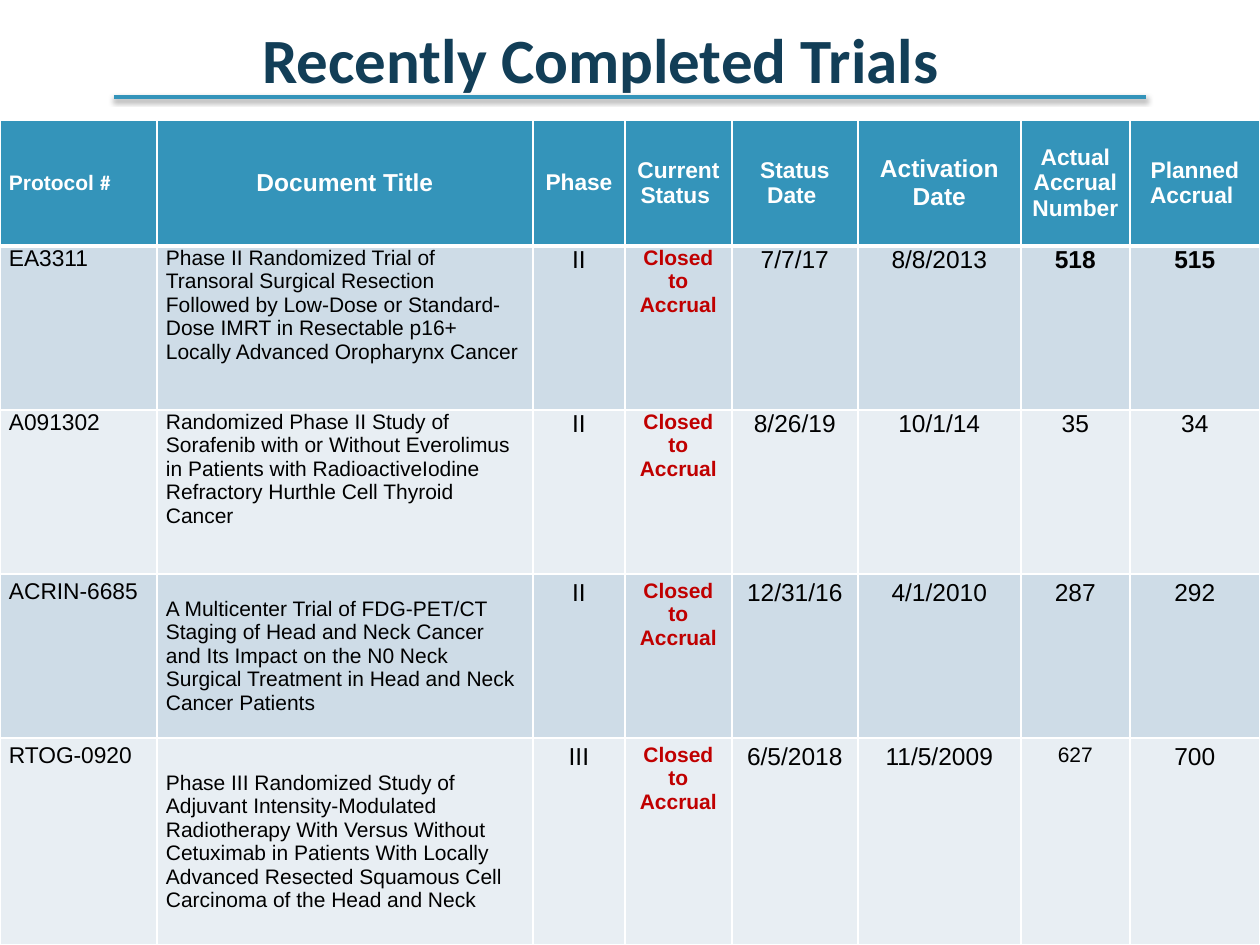
from lxml import etree
from pptx import Presentation
from pptx.dml.color import RGBColor
from pptx.enum.shapes import MSO_CONNECTOR
from pptx.enum.text import MSO_ANCHOR, PP_ALIGN
from pptx.oxml import parse_xml
from pptx.oxml.ns import qn
from pptx.util import Emu, Pt

LEFT, CENTER = PP_ALIGN.LEFT, PP_ALIGN.CENTER
TOP, MIDDLE = MSO_ANCHOR.TOP, MSO_ANCHOR.MIDDLE
STRAIGHT = MSO_CONNECTOR.STRAIGHT

NAVY = RGBColor(0x12, 0x3E, 0x57)
TEAL = RGBColor(0x34, 0x94, 0xBA)
BAND_DARK = RGBColor(0xCE, 0xDC, 0xE7)
BAND_LIGHT = RGBColor(0xE8, 0xEE, 0xF3)
RED = RGBColor(0xC0, 0x00, 0x00)
BLACK = RGBColor(0x00, 0x00, 0x00)
WHITE = RGBColor(0xFF, 0xFF, 0xFF)

HEADING = "Recently Completed Trials"
HEADERS = [
    ("Protocol ", 12), ("Document Title", 14), ("Phase", 13), ("Current Status ", 13),
    ("Status Date ", 13), ("Activation Date", 14), ("Actual Accrual Number ", 13),
    ("Planned Accrual ", 13),
]
STATUS = "Closed to Accrual"
TRIALS = [
    ("EA3311",
     "Phase II Randomized Trial of Transoral Surgical Resection Followed by Low-Dose or "
     "Standard-Dose IMRT in Resectable p16+ Locally Advanced Oropharynx Cancer",
     "II", STATUS, "7/7/17", "8/8/2013", "518", "515"),
    ("A091302",
     "Randomized Phase II Study of Sorafenib with or Without Everolimus in Patients with "
     "RadioactiveIodine Refractory Hurthle Cell Thyroid Cancer",
     "II", STATUS, "8/26/19", "10/1/14", "35", "34"),
    ("ACRIN-6685",
     "A Multicenter Trial of FDG-PET/CT Staging of Head and Neck Cancer and Its Impact on "
     "the N0 Neck Surgical Treatment in Head and Neck Cancer Patients",
     "II", STATUS, "12/31/16", "4/1/2010", "287", "292"),
    ("RTOG-0920",
     "Phase III Randomized Study of Adjuvant Intensity-Modulated Radiotherapy With Versus "
     "Without Cetuximab in Patients With Locally Advanced Resected Squamous Cell Carcinoma "
     "of the Head and Neck",
     "III", STATUS, "6/5/2018", "11/5/2009", "627", "700"),
]
BODY_SIZES = [13, 12, 14, 12, 14, 14, 14, 14]
SIZE_EXCEPTIONS = {(4, 6): 12}
BOLD_CELLS = {(1, 6), (1, 7)}
TITLE_COL, STATUS_COL = 1, 3
FIRST_PADDED_ROW = 3

COLUMN_WIDTHS = [157, 376, 92, 107, 126, 163, 109, 130]
ROW_HEIGHTS = [126, 164, 164, 164, 207]
TABLE_TOP = 120


def px(length):
    return Emu(round(length * 914400 / 126))


def apply(target, values):
    for name, value in values.items():
        setattr(target, name, value)


def add_run(paragraph, text, color, **font_format):
    run = paragraph.add_run()
    run.text = text
    apply(run.font, font_format)
    run.font.color.rgb = color


def add_border(cell, side, points):
    border = etree.SubElement(cell._tc.get_or_add_tcPr(), qn(f"a:ln{side}"), w=str(Pt(points)))
    fill = etree.SubElement(border, qn("a:solidFill"))
    etree.SubElement(fill, qn("a:srgbClr"), val=str(WHITE))


def add_heading(slide):
    frame = slide.shapes.add_textbox(px(45), px(16), px(1139), px(69)).text_frame
    apply(frame, {"word_wrap": True, "vertical_anchor": TOP, "margin_left": 0,
                  "margin_right": px(28), "margin_top": px(4), "margin_bottom": 0})
    paragraph = frame.paragraphs[0]
    paragraph.alignment = CENTER
    add_run(paragraph, HEADING, NAVY, size=Pt(36), name="Calibri", bold=True)


def add_rule(slide):
    rule = slide.shapes.add_connector(STRAIGHT, px(114), px(97), px(1146), px(97))
    rule.line.color.rgb = TEAL
    rule.line.width = Pt(2)
    rule._element.spPr.append(parse_xml(
        '<a:effectLst xmlns:a="http://schemas.openxmlformats.org/drawingml/2006/main">'
        f'<a:outerShdw blurRad="{Pt(3.1)}" dist="{Pt(1.6)}" dir="5400000" rotWithShape="0">'
        '<a:srgbClr val="000000"><a:alpha val="38000"/></a:srgbClr>'
        '</a:outerShdw></a:effectLst>'))


def fill_cell(cell, row, col, text, size):
    header = row == 0
    margin = px(5) if header or row >= FIRST_PADDED_ROW else 0
    centered = header or (col == TITLE_COL and row >= FIRST_PADDED_ROW)
    apply(cell, {"margin_left": px(9), "margin_right": px(9), "margin_top": margin,
                 "margin_bottom": margin, "vertical_anchor": MIDDLE if centered else TOP})
    for side, points in (("L", 1), ("R", 1), ("T", 3 if row == 1 else 1), ("B", 3 if header else 1)):
        add_border(cell, side, points)
    cell.fill.solid()
    cell.fill.fore_color.rgb = TEAL if header else BAND_DARK if row % 2 else BAND_LIGHT

    is_status = col == STATUS_COL and not header
    color = WHITE if header else RED if is_status else BLACK
    bold = header or is_status or (row, col) in BOLD_CELLS
    paragraph = cell.text_frame.paragraphs[0]
    paragraph.alignment = LEFT if col == 0 or (col == TITLE_COL and not header) else CENTER
    add_run(paragraph, text, color, size=Pt(size), name="Arial", bold=bold)
    if header and col == 0:
        add_run(paragraph, "#", color, size=Pt(size), name="Calibri", bold=bold)


def add_trials(slide):
    table = slide.shapes.add_table(
        len(ROW_HEIGHTS), len(COLUMN_WIDTHS), 0, px(TABLE_TOP),
        px(sum(COLUMN_WIDTHS)), px(sum(ROW_HEIGHTS))).table
    for column, width in zip(table.columns, COLUMN_WIDTHS):
        column.width = px(width)
    for table_row, height in zip(table.rows, ROW_HEIGHTS):
        table_row.height = px(height)
    for col, (label, size) in enumerate(HEADERS):
        fill_cell(table.cell(0, col), 0, col, label, size)
    for row, trial in enumerate(TRIALS, start=1):
        for col, (text, size) in enumerate(zip(trial, BODY_SIZES)):
            fill_cell(table.cell(row, col), row, col, text, SIZE_EXCEPTIONS.get((row, col), size))


def main():
    deck = Presentation()
    deck.slide_width, deck.slide_height = px(1260), px(945)
    slide = deck.slides.add_slide(deck.slide_layouts[6])
    add_heading(slide)
    add_trials(slide)
    add_rule(slide)
    deck.save("out.pptx")


if __name__ == "__main__":
    main()
